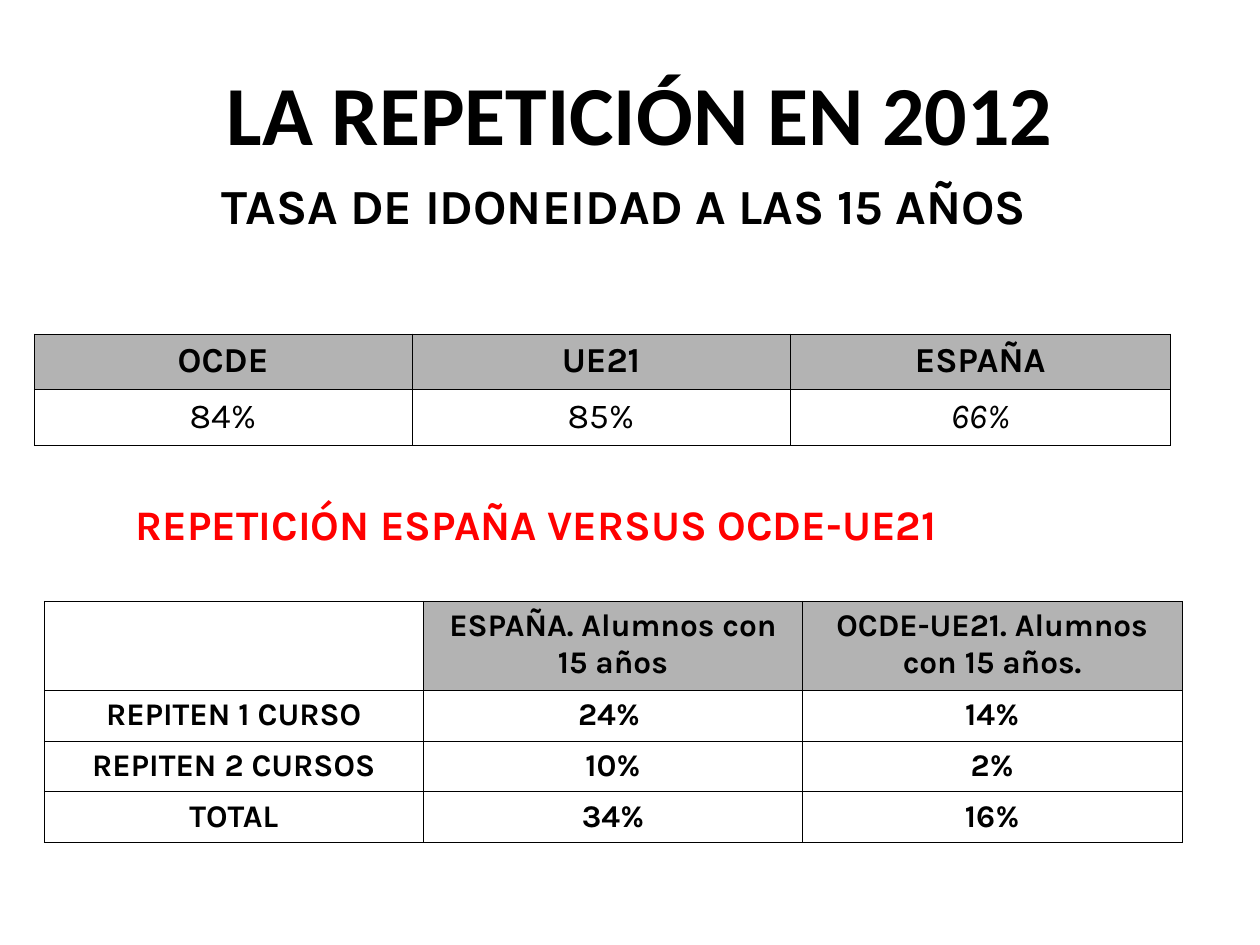
from lxml.etree import SubElement
from pptx import Presentation
from pptx.dml.color import RGBColor
from pptx.enum.text import PP_ALIGN
from pptx.oxml.ns import qn
from pptx.util import Inches, Pt

# Content
HEADINGS = [
    dict(text="LA REPETICIÓN EN 2012", box=(0.43, 0.44, 9.21, 0.91), font="Calibri",
         size="title", color="text", align=PP_ALIGN.CENTER, left_inset=0.19, before=17.5),
    dict(text="TASA DE IDONEIDAD A LAS 15 AÑOS", box=(1.21, 1.34, 7.48, 1.05), font="Karla",
         size="subtitle", color="text", align=PP_ALIGN.CENTER),
    dict(text="REPETICIÓN ESPAÑA VERSUS OCDE-UE21", box=(0.98, 3.91, 7.87, 0.91), font="Karla",
         size="section", color="accent", align=PP_ALIGN.LEFT),
]
TABLES = [
    dict(rows=[["OCDE", "UE21", "ESPAÑA"],
               ["84%", "85%", "66%"]],
         origin=(0.27, 2.65), widths=(3, 3, 3.02), heights=(0.44, 0.44),
         size="rates", bold_body=False, italic_cells=["66%"]),
    dict(rows=[["", "ESPAÑA. Alumnos con 15 años", "OCDE-UE21. Alumnos con 15 años."],
               ["REPITEN 1 CURSO", "24% ", "14%"],
               ["REPITEN 2 CURSOS", "10%", "2%"],
               ["TOTAL", "34%", "16%"]],
         origin=(0.35, 4.77), widths=(3.01,) * 3, heights=(0.7, 0.4, 0.4, 0.4),
         size="repeats", bold_body=True, italic_cells=[]),
]

THEME = dict(
    colors=dict(text="000000", accent="FF0000", header="B3B3B3", border="000000"),
    sizes=dict(title=48, subtitle=28, section=24, rates=20, repeats=18),
    table_font="Karla", border_width=0.23,
)


def color(name):
    return RGBColor.from_string(THEME["colors"][name])


def format_paragraph(paragraph, font, size, color_name, align, bold=True, italic=False):
    paragraph.alignment = align
    for run in paragraph.runs:
        run.font.name = font
        run.font.size = Pt(THEME["sizes"][size])
        run.font.bold = bold
        run.font.italic = italic
        run.font.color.rgb = color(color_name)


def add_heading(slide, heading):
    shape = slide.shapes.add_textbox(*map(Inches, heading["box"]))
    text_frame = shape.text_frame
    text_frame.word_wrap = True
    text_frame.margin_left = Inches(heading.get("left_inset", 0.1))
    text_frame.text = heading["text"]
    paragraph = text_frame.paragraphs[0]
    paragraph.space_before = Pt(heading.get("before", 0))
    format_paragraph(paragraph, heading["font"], heading["size"],
                     heading["color"], heading["align"])


def add_borders(cell):
    # Border lines must come before the fill in the cell properties
    properties = cell._tc.get_or_add_tcPr()
    for position, side in enumerate(("lnL", "lnR", "lnT", "lnB")):
        line = SubElement(properties, qn(f"a:{side}"), w=str(Pt(THEME["border_width"])))
        fill = SubElement(line, qn("a:solidFill"))
        SubElement(fill, qn("a:srgbClr"), val=THEME["colors"]["border"])
        properties.insert(position, line)


def add_grid(slide, content):
    rows, widths, heights = content["rows"], content["widths"], content["heights"]
    lengths = (*content["origin"], sum(widths), sum(heights))
    table = slide.shapes.add_table(len(rows), len(widths), *map(Inches, lengths)).table
    table.first_row = table.horz_banding = False
    for column, width in zip(table.columns, widths):
        column.width = Inches(width)
    for row, height in zip(table.rows, heights):
        row.height = Inches(height)
    for row_index, texts in enumerate(rows):
        is_header = row_index == 0
        for column_index, text in enumerate(texts):
            cell = table.cell(row_index, column_index)
            cell.text_frame.text = text
            paragraph = cell.text_frame.paragraphs[0]
            paragraph.line_spacing = 1.01
            format_paragraph(paragraph, THEME["table_font"], content["size"], "text",
                             PP_ALIGN.CENTER, bold=is_header or content["bold_body"],
                             italic=text in content["italic_cells"])
            if is_header and text:
                cell.fill.solid()
                cell.fill.fore_color.rgb = color("header")
            else:
                cell.fill.background()
            add_borders(cell)


def main():
    presentation = Presentation()
    presentation.slide_width, presentation.slide_height = Inches(10), Inches(7.5)
    slide = presentation.slides.add_slide(presentation.slide_layouts[6])
    # Title, subtitle and section heading
    for heading in HEADINGS:
        add_heading(slide, heading)
    # Rate table and repetition table
    for content in TABLES:
        add_grid(slide, content)
    presentation.save("out.pptx")


if __name__ == "__main__":
    main()
